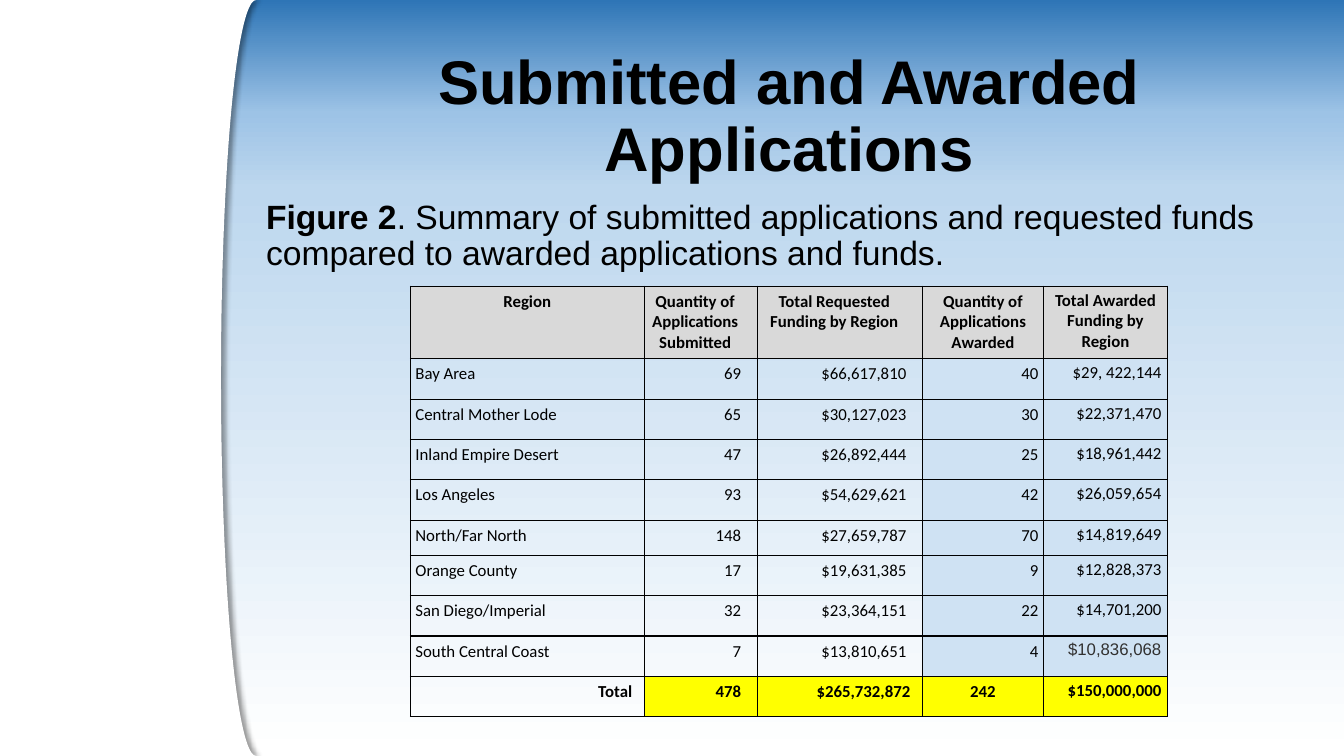
from pptx import Presentation
from pptx.dml.color import RGBColor
from pptx.enum.shapes import MSO_SHAPE as SHAPE
from pptx.enum.text import MSO_ANCHOR as ANCHOR, PP_ALIGN as ALIGN
from pptx.oxml import parse_xml
from pptx.oxml.ns import nsdecls, qn
from pptx.util import Inches, Pt


def rgb(value):
    return RGBColor.from_string(value)


def add_run(p, text, size, bold=False, name="Arial", color="000000"):
    r = p.add_run()
    r.text = text
    for key, value in {"size": Pt(size), "bold": bold, "name": name}.items():
        setattr(r.font, key, value)
    r.font.color.rgb = rgb(color)


NS = nsdecls("a")
prs = Presentation()
prs.slide_width, prs.slide_height = Inches(13.33), Inches(7.5)
s = prs.slides.add_slide(prs.slide_layouts[6])

fill = s.background.fill
fill.gradient()
fill.gradient_angle = 270
stops = s.background._cSld.find(".//" + qn("a:gsLst"))
for stop in list(stops):
    stops.remove(stop)
for pos, color in [(0, "2E75B6"), (15, "9DC3E6"), (25, "BDD7EE"), (100, "FFFFFF")]:
    stops.append(parse_xml(
        f'<a:gs {NS} pos="{pos * 1000}"><a:srgbClr val="{color}"/></a:gs>'))

for kind, left, width in [(SHAPE.FLOWCHART_STORED_DATA, 0.45, 2.09),
                          (SHAPE.RECTANGLE, 0, 1.16)]:
    sp = s.shapes.add_shape(kind, Inches(left), 0, Inches(width), Inches(7.5))
    sp.shadow.inherit = False
    sp.fill.solid()
    sp.fill.fore_color.rgb = rgb("FFFFFF")
    sp.line.fill.background()
    if kind == SHAPE.FLOWCHART_STORED_DATA:
        sp._element.spPr.find(qn("a:effectLst")).append(parse_xml(
            f'<a:outerShdw {NS} blurRad="{Pt(4)}" dist="{Pt(3)}" dir="0" algn="l" rotWithShape="0">'
            '<a:srgbClr val="000000"><a:alpha val="40000"/></a:srgbClr></a:outerShdw>'))

header = ["Region", "Quantity of Applications Submitted",
          "Total Requested Funding by Region",
          "Quantity of Applications Awarded", "Total Awarded Funding by Region"]
regions = [
    ["Bay Area", "69", "$66,617,810", "40", "$29, 422,144"],
    ["Central Mother Lode", "65", "$30,127,023", "30", "$22,371,470"],
    ["Inland Empire Desert", "47", "$26,892,444", "25", "$18,961,442"],
    ["Los Angeles", "93", "$54,629,621", "42", "$26,059,654"],
    ["North/Far North", "148", "$27,659,787", "70", "$14,819,649"],
    ["Orange County", "17", "$19,631,385", "9", "$12,828,373"],
    ["San Diego/Imperial", "32", "$23,364,151", "22", "$14,701,200"],
    ["South Central Coast", "7", "$13,810,651", "4", "$10,836,068"],
]
total = ["Total", "478", "$265,732,872", "242", "$150,000,000"]
rows = [header, *regions, total]
last = len(rows) - 1
col_widths = [2.32, 1.12, 1.64, 1.2, 1.23]
row_heights = [0.72] + [0.4] * 4 + [0.35] + [0.4] * 4

table = s.shapes.add_table(len(rows), len(header), Inches(4.07), Inches(2.84),
                           Inches(sum(col_widths)), Inches(sum(row_heights))).table
table.first_row = table.horz_banding = False
for col, width in zip(table.columns, col_widths):
    col.width = Inches(width)
for row, height in zip(table.rows, row_heights):
    row.height = Inches(height)

for i, values in enumerate(rows):
    for j, text in enumerate(values):
        cell = table.cell(i, j)
        side, top, right = (0.06, 0.04, 0.06) if j == 4 else (0.05, 0.05, 0.05)
        if j in (1, 2):
            right = 0.12 if (i, j) == (last, 2) else 0.16
        if (i, j) == (last, 0):
            right = 0.12
        margins = {"margin_left": side, "margin_right": right,
                   "margin_top": top, "margin_bottom": top}
        for key, value in margins.items():
            setattr(cell, key, Inches(value))

        tcPr = cell._tc.get_or_add_tcPr()
        for edge in ("lnL", "lnR", "lnT", "lnB"):
            tcPr.append(parse_xml(
                f'<a:{edge} {NS} w="{Pt(1)}"><a:solidFill><a:srgbClr val="000000"/>'
                f'</a:solidFill></a:{edge}>'))
        if i == 0:
            color = "D9D9D9"
        elif i == last:
            color = "FFFF00" if j else None
        else:
            color = "CFE2F3" if j > 2 else None
        if color:
            cell.fill.solid()
            cell.fill.fore_color.rgb = rgb(color)
        else:
            cell.fill.background()

        p = cell.text_frame.paragraphs[0]
        if i == 0 or (i, j) == (last, 3):
            p.alignment = ALIGN.CENTER
        else:
            p.alignment = ALIGN.RIGHT if j or i == last else ALIGN.LEFT
        odd = (i, j) == (last - 1, 4)
        add_run(p, text, 12, i in (0, last), "Arial" if odd else "Calibri",
                "323130" if odd else "000000")

caption = [("Figure 2", True),
           (". Summary of submitted applications and requested funds compared to "
            "awarded applications and funds.", False)]
title = [("Submitted and Awarded Applications", True)]
for top, height, size, anchor, align, runs in [
        (1.94, 0.79, 24, ANCHOR.TOP, ALIGN.LEFT, caption),
        (0.4, 1.54, 44, ANCHOR.MIDDLE, ALIGN.CENTER, title)]:
    tf = s.shapes.add_textbox(Inches(2.54), Inches(top), Inches(10.58), Inches(height)).text_frame
    tf.word_wrap = True
    tf.vertical_anchor = anchor
    p = tf.paragraphs[0]
    p.alignment = align
    p.line_spacing = 0.9
    for text, bold in runs:
        add_run(p, text, size, bold)

prs.save("out.pptx")
